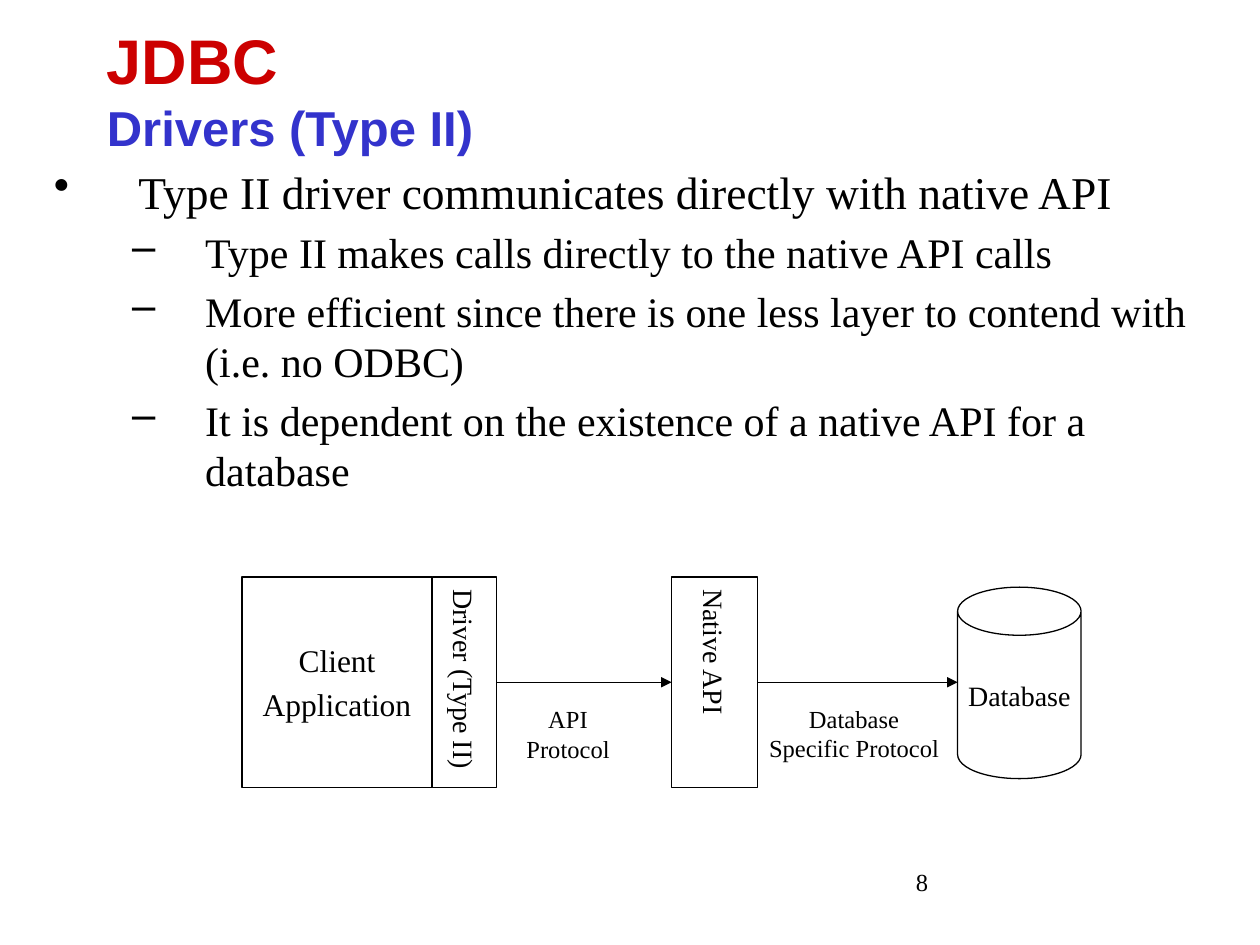
from dataclasses import dataclass
from typing import Optional

from lxml.etree import SubElement
from pptx import Presentation
from pptx.dml.color import RGBColor
from pptx.enum.shapes import MSO_CONNECTOR as Conn, MSO_SHAPE as Shp
from pptx.enum.text import MSO_ANCHOR as Anchor, MSO_AUTO_SIZE as Auto, PP_ALIGN as Align
from pptx.oxml.ns import qn
from pptx.util import Inches, Pt

COLORS = {"text": "000000", "title": "CC0000", "subtitle": "3333CC"}
SERIF, SANS = "Times New Roman", "Arial"
ROW_TOP, ROW_HEIGHT = 4.58, 1.67
ROW_MIDDLE = ROW_TOP + ROW_HEIGHT / 2


@dataclass
class Node:
    lines: list[str]
    left: float
    width: float
    size: int
    top: float = ROW_TOP
    height: float = ROW_HEIGHT
    shape: Shp = Shp.RECTANGLE
    vertical: bool = False
    wrap: bool = True


@dataclass
class Label:
    text: str
    left: float
    top: float
    width: float
    height: float


@dataclass
class Bullet:
    text: str
    level: int = 1


def color(name: str) -> RGBColor:
    return RGBColor.from_string(COLORS[name])


def set_font(font, size: int, name: str = SERIF, tone: str = "text", bold: bool = False) -> None:
    for key, value in {"size": Pt(size), "name": name, "bold": bold}.items():
        setattr(font, key, value)
    font.color.rgb = color(tone)


def set_frame(tf, **values) -> None:
    for key, value in {"word_wrap": True, **values}.items():
        setattr(tf, key, value)


def write_centred(tf, lines: list[str], size: int) -> None:
    for i, line in enumerate(lines):
        p = tf.add_paragraph() if i else tf.paragraphs[0]
        p.alignment = Align.CENTER
        if i:
            p.space_before = Pt(size * 0.2)
        r = p.add_run()
        r.text = line
        set_font(r.font, size)


def make_vertical(tf) -> None:
    tf._txBody.bodyPr.set("vert", "eaVert")


def add_text(slide, left: float, top: float, width: float, height: float):
    return slide.shapes.add_textbox(Inches(left), Inches(top), Inches(width), Inches(height))


def add_title(slide) -> None:
    tf = add_text(slide, 0.75, 0.08, 8.5, 1.25).text_frame
    set_frame(tf, vertical_anchor=Anchor.MIDDLE)
    p = tf.paragraphs[0]
    r = p.add_run()
    r.text = "JDBC"
    set_font(r.font, 36, SANS, "title", True)
    p.add_line_break()
    r = p.add_run()
    r.text = "Drivers (Type II)"
    set_font(r.font, 28, SANS, "subtitle", True)


def add_bullets(slide, bullets: list[Bullet]) -> None:
    styles = [(26, "•", 0.67, -0.67), (24, "–", 1.2, -0.58)]
    tf = add_text(slide, 0.33, 1.25, 9.25, 5.83).text_frame
    set_frame(tf)
    for i, bullet in enumerate(bullets):
        size, char, margin, indent = styles[bullet.level]
        p = tf.add_paragraph() if i else tf.paragraphs[0]
        p.level = bullet.level
        if i:
            p.space_before = Pt(size * 0.2)
        pPr = p._p.get_or_add_pPr()
        pPr.set("marL", str(Inches(margin)))
        pPr.set("indent", str(Inches(indent)))
        SubElement(pPr, qn("a:buChar")).set("char", char)
        r = p.add_run()
        r.text = bullet.text
        set_font(r.font, size)


def add_node(slide, node: Node):
    s = slide.shapes.add_shape(node.shape, Inches(node.left), Inches(node.top),
                               Inches(node.width), Inches(node.height))
    s.shadow.inherit = False
    s.fill.background()
    s.line.color.rgb = color("text")
    s.line.width = Pt(0.75)
    if node.shape == Shp.CAN:
        s.adjustments[0] = 0.39
    set_frame(s.text_frame, word_wrap=node.wrap, vertical_anchor=Anchor.MIDDLE)
    if node.vertical:
        make_vertical(s.text_frame)
    write_centred(s.text_frame, node.lines, node.size)
    return s


def add_arrow(slide, start, end_x: float, end: Optional[object] = None) -> None:
    y = Inches(ROW_MIDDLE)
    s = slide.shapes.add_connector(Conn.STRAIGHT, start.left + start.width, y, Inches(end_x), y)
    s.begin_connect(start, 3)
    if end is not None:
        s.end_connect(end, 1)
    s.line.color.rgb = color("text")
    s.line.width = Pt(0.75)
    SubElement(s.line._get_or_add_ln(), qn("a:tailEnd")).set("type", "triangle")
    SubElement(s._element.spPr, qn("a:effectLst"))


def add_label(slide, label: Label) -> None:
    s = add_text(slide, label.left, label.top, label.width, label.height)
    s.rotation = 270
    set_frame(s.text_frame, margin_left=0, margin_right=0, auto_size=Auto.SHAPE_TO_FIT_TEXT)
    make_vertical(s.text_frame)
    write_centred(s.text_frame, [label.text], 14)


def add_page_number(slide, number: str) -> None:
    tf = add_text(slide, 7.17, 6.83, 2.08, 0.5).text_frame
    set_frame(tf)
    r = tf.paragraphs[0].add_run()
    r.text = number
    set_font(r.font, 14)


def main() -> None:
    prs = Presentation()
    prs.slide_width, prs.slide_height = Inches(10), Inches(7.5)
    slide = prs.slides.add_slide(prs.slide_layouts[6])

    add_page_number(slide, "8")
    add_bullets(slide, [
        Bullet("Type II driver communicates directly with native API", 0),
        Bullet("Type II makes calls directly to the native API calls"),
        Bullet("More efficient since there is one less layer to contend with (i.e. no ODBC)"),
        Bullet("It is dependent on the existence of a native API for a database"),
    ])
    add_title(slide)

    client = Node(["Client", "Application"], 1.92, 1.51, 18)
    driver = Node(["Driver (Type II)"], 3.43, 0.51, 16, vertical=True)
    native = Node(["Native API"], 5.33, 0.68, 16, vertical=True)
    database = Node(["Database"], 7.6, 0.98, 16, 4.66, 1.52, Shp.CAN, wrap=False)
    _, driver_box, native_box, _ = [add_node(slide, n) for n in (client, driver, native, database)]

    add_arrow(slide, driver_box, native.left, native_box)
    add_arrow(slide, native_box, database.left)
    for label in (Label("Database Specific Protocol", 6.56, 5.03, 0.47, 1.58),
                  Label("API Protocol", 4.55, 5.12, 0.23, 1.17)):
        add_label(slide, label)

    prs.save("out.pptx")


if __name__ == "__main__":
    main()
